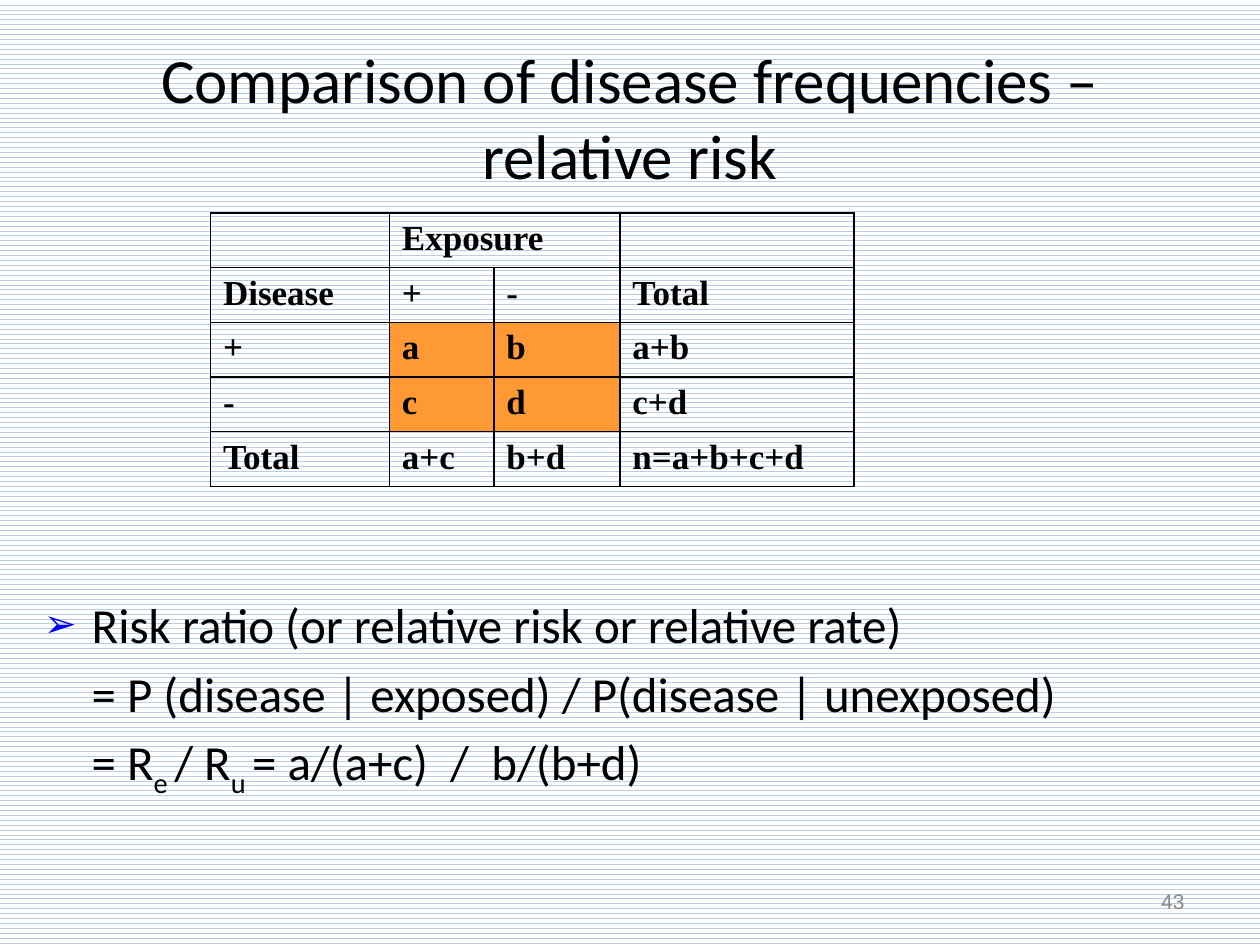
import pptx
import pptx.util
import pptx.dml.color
import pptx.enum.dml
import pptx.enum.text
import pptx.oxml
import pptx.oxml.ns
from lxml import etree

# Content
TITLE = "Comparison of disease frequencies – relative risk"
ROWS = [
    ["", "Exposure", "", ""],
    ["Disease", "+", "-", "Total"],
    ["+", "a", "b", "a+b"],
    ["-", "c", "d", "c+d"],
    ["Total", "a+c", "b+d", "n=a+b+c+d"],
]
COUNTS = {"a", "b", "c", "d"}
# Each line is a list of (text, is subscript)
FORMULA = [
    [("Risk ratio (or relative risk or relative rate)", False)],
    [("\t= P (disease | exposed) / P(disease | unexposed)", False)],
    [("\t= R", False), ("e ", True), ("/ R", False), ("u ", True),
     ("= a/(a+c)  /  b/(b+d)", False)],
]
PAGE = "43"

# Look
COLORS = {"text": "000000", "page": "898989", "count": "FF9933",
          "bullet": "0000FF", "wave": "B9CDE5", "paper": "FFFFFF"}
COL_WIDTHS = [1.42, 0.83, 1, 1.86]
ROW_HEIGHT = 0.41
HANG = 0.38

Inches, Pt = pptx.util.Inches, pptx.util.Pt
PP_ALIGN, MSO_ANCHOR = pptx.enum.text.PP_ALIGN, pptx.enum.text.MSO_ANCHOR


def rgb(name):
    return pptx.dml.color.RGBColor.from_string(COLORS[name])


def add_run(p, text, size, font, color="text", bold=False):
    r = p.add_run()
    r.text = text
    r.font.size, r.font.name, r.font.bold = Pt(size), font, bold
    r.font.color.rgb = rgb(color)
    return r


def add_box(s, left, top, width, height, anchor):
    box = s.shapes.add_textbox(*map(Inches, (left, top, width, height)))
    tf = box.text_frame
    tf.word_wrap, tf.vertical_anchor = True, anchor
    return tf


def hang(p):
    pPr = p._p.get_or_add_pPr()
    pPr.set("marL", str(Inches(HANG)))
    pPr.set("indent", str(-Inches(HANG)))
    return pPr


def add_bullet(pPr):
    ns = pptx.oxml.ns.nsdecls("a")
    for xml in (
        f'<a:buClr {ns}><a:srgbClr val="{COLORS["bullet"]}"/></a:buClr>',
        f'<a:buSzPct {ns} val="80000"/>',
        f'<a:buFont {ns} typeface="Arial"/>',
        f'<a:buChar {ns} char="➢"/>',
    ):
        pPr.append(pptx.oxml.parse_xml(xml))


def add_borders(cell):
    tcPr = cell._tc.get_or_add_tcPr()
    for i, side in enumerate(("lnL", "lnR", "lnT", "lnB")):
        ln = etree.Element(pptx.oxml.ns.qn(f"a:{side}"), w=str(Pt(1)))
        fill = etree.SubElement(ln, pptx.oxml.ns.qn("a:solidFill"))
        etree.SubElement(fill, pptx.oxml.ns.qn("a:srgbClr"), val=COLORS["text"])
        tcPr.insert(i, ln)


def main():
    prs = pptx.Presentation()
    prs.slide_width, prs.slide_height = Inches(10), Inches(7.5)
    s = prs.slides.add_slide(prs.slide_layouts[6])

    # Patterned background
    fill = s.background.fill
    fill.patterned()
    fill.pattern = pptx.enum.dml.MSO_PATTERN.WAVE
    fill.fore_color.rgb, fill.back_color.rgb = rgb("wave"), rgb("paper")

    # Title
    p = add_box(s, 0.5, 0.3, 9, 1.25, MSO_ANCHOR.MIDDLE).paragraphs[0]
    p.alignment = PP_ALIGN.CENTER
    add_run(p, TITLE, 36, "Calibri")

    # Two-by-two table with totals
    table = s.shapes.add_table(
        len(ROWS), len(COL_WIDTHS), Inches(1.67), Inches(1.69),
        Inches(sum(COL_WIDTHS)), Inches(ROW_HEIGHT * len(ROWS))).table
    table.first_row = table.horz_banding = False
    for col, width in zip(table.columns, COL_WIDTHS):
        col.width = Inches(width)
    for i, row in enumerate(ROWS):
        table.rows[i].height = Inches(ROW_HEIGHT)
        for j, text in enumerate(row):
            cell = table.cell(i, j)
            if text in COUNTS:
                cell.fill.solid()
                cell.fill.fore_color.rgb = rgb("count")
            else:
                cell.fill.background()
            add_borders(cell)
            p = cell.text_frame.paragraphs[0]
            if text:
                hang(p)
                add_run(p, text, 20, "Times New Roman", bold=True)
    table.cell(0, 1).merge(table.cell(0, 2))

    # Risk ratio formula
    tf = add_box(s, 0.25, 4.67, 9.33, 2.75, MSO_ANCHOR.TOP)
    for i, line in enumerate(FORMULA):
        p = tf.add_paragraph() if i else tf.paragraphs[0]
        p.space_before = Pt(5.6)
        pPr = hang(p)
        if i == 0:
            add_bullet(pPr)
        for text, subscript in line:
            r = add_run(p, text, 28, "Calibri")
            if subscript:
                r.font._element.set("baseline", "-25000")

    # Page number
    p = add_box(s, 7.17, 6.95, 2.33, 0.4, MSO_ANCHOR.MIDDLE).paragraphs[0]
    p.alignment = PP_ALIGN.RIGHT
    add_run(p, PAGE, 12, "Arial", "page")

    prs.save("out.pptx")


if __name__ == "__main__":
    main()
